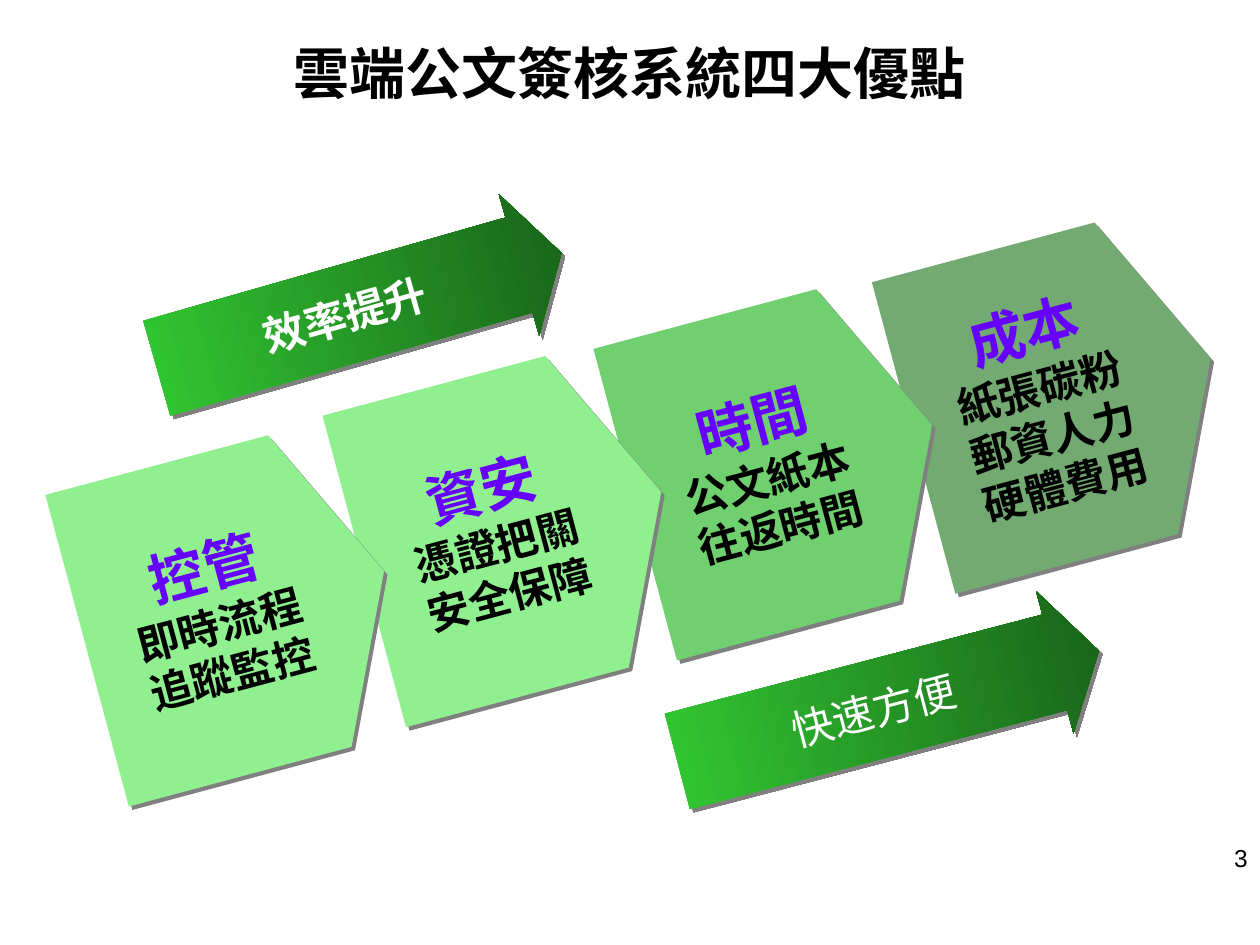
"""Build a slide on the four advantages of a cloud document approval system."""
from dataclasses import dataclass

from lxml.etree import SubElement
from pptx import Presentation
from pptx.dml.color import RGBColor
from pptx.enum.shapes import MSO_SHAPE
from pptx.enum.text import MSO_ANCHOR, PP_ALIGN
from pptx.oxml.ns import qn
from pptx.shapes.autoshape import Shape
from pptx.slide import Slide
from pptx.text.text import TextFrame
from pptx.util import Pt

FONT = "Arial"
PLATE_WIDTH, PLATE_HEIGHT, PLATE_ROTATION = 175.7, 184.3, 345
ARROW_HEIGHT = 84.2


@dataclass(frozen=True)
class Line:
    text: str
    size: float
    color: str
    bold: bool = True


@dataclass(frozen=True)
class Advantage:
    left: float
    top: float
    fill: str
    heading: str
    details: tuple[str, ...]


@dataclass(frozen=True)
class Arrow:
    left: float
    top: float
    width: float
    rotation: float
    head: float
    line: Line


ARROWS = (
    Arrow(85, 135.4, 240.5, 344.1, 0.3, Line("效率提升", 24, "FFFFFF")),
    Arrow(383, 361.4, 249.1, 345.3, 0.31, Line("快速方便", 24, "FFFFFF", False)),
)
ADVANTAGES = (
    Advantage(519.1, 135.4, "72AA72", "成本", ("紙張碳粉", "郵資人力", "硬體費用")),
    Advantage(360, 173.5, "70D070", "時間", ("公文紙本", "往返時間")),
    Advantage(205.2, 211.7, "90F090", "資安", ("憑證把關", "安全保障")),
    Advantage(46.8, 257, "90F090", "控管", ("即時流程", "追蹤監控")),
)


def color(value: str) -> RGBColor:
    return RGBColor.from_string(value)


def write_lines(frame: TextFrame, lines: list[Line], alignment: PP_ALIGN = PP_ALIGN.CENTER) -> None:
    for index, line in enumerate(lines):
        paragraph = frame.add_paragraph() if index else frame.paragraphs[0]
        paragraph.alignment = alignment
        run = paragraph.add_run()
        run.text = line.text
        run.font.name = FONT
        run.font.size = Pt(line.size)
        run.font.bold = line.bold
        run.font.color.rgb = color(line.color)


def add_shadow(shape: Shape) -> None:
    shape.shadow.inherit = False
    effects = shape._element.spPr.find(qn("a:effectLst"))
    shadow = SubElement(effects, qn("a:outerShdw"), dist=str(Pt(2.8)), dir="2700000",
                        algn="ctr", rotWithShape="0")
    SubElement(shadow, qn("a:srgbClr"), val="808080")


def add_tilted_shape(slide: Slide, kind: MSO_SHAPE, left: float, top: float, width: float,
                     height: float, rotation: float, lines: list[Line]) -> Shape:
    shape = slide.shapes.add_shape(kind, Pt(left), Pt(top), Pt(width), Pt(height))
    shape.rotation = rotation
    shape.line.fill.background()
    add_shadow(shape)
    shape.text_frame.word_wrap = False
    shape.text_frame.vertical_anchor = MSO_ANCHOR.MIDDLE
    write_lines(shape.text_frame, lines)
    return shape


def add_arrow(slide: Slide, arrow: Arrow) -> None:
    shape = add_tilted_shape(slide, MSO_SHAPE.RIGHT_ARROW, arrow.left, arrow.top, arrow.width,
                             ARROW_HEIGHT, arrow.rotation, [arrow.line])
    shape.adjustments[0] = 0.67
    shape.adjustments[1] = arrow.head
    shape.fill.gradient()
    shape.fill.gradient_angle = 0
    for stop, value in zip(shape.fill.gradient_stops, ("33CC33", "185E18")):
        stop.color.rgb = color(value)


def add_advantage(slide: Slide, advantage: Advantage) -> None:
    lines = [Line(advantage.heading, 32, "6600FF")]
    lines += [Line(detail, 24, "000000") for detail in advantage.details]
    shape = add_tilted_shape(slide, MSO_SHAPE.PENTAGON, advantage.left, advantage.top,
                             PLATE_WIDTH, PLATE_HEIGHT, PLATE_ROTATION, lines)
    shape.adjustments[0] = 0.25
    shape.fill.solid()
    shape.fill.fore_color.rgb = color(advantage.fill)


def add_title(slide: Slide) -> None:
    title = slide.shapes.title
    title.left, title.top, title.width, title.height = Pt(36), Pt(21.6), Pt(648), Pt(39)
    title.text_frame.vertical_anchor = MSO_ANCHOR.MIDDLE
    write_lines(title.text_frame, [Line("雲端公文簽核系統四大優點", 32, "000000")])


def add_page_number(slide: Slide) -> None:
    box = slide.shapes.add_textbox(Pt(552), Pt(478), Pt(168), Pt(37.5))
    box.text_frame.word_wrap = True
    write_lines(box.text_frame, [Line("3", 14, "000000", False)], PP_ALIGN.RIGHT)


def main() -> None:
    presentation = Presentation()
    presentation.slide_width, presentation.slide_height = Pt(720), Pt(540)
    slide = presentation.slides.add_slide(presentation.slide_layouts[5])
    add_page_number(slide)
    add_title(slide)
    for arrow in ARROWS:
        add_arrow(slide, arrow)
    for advantage in ADVANTAGES:
        add_advantage(slide, advantage)
    presentation.save("out.pptx")


if __name__ == "__main__":
    main()
